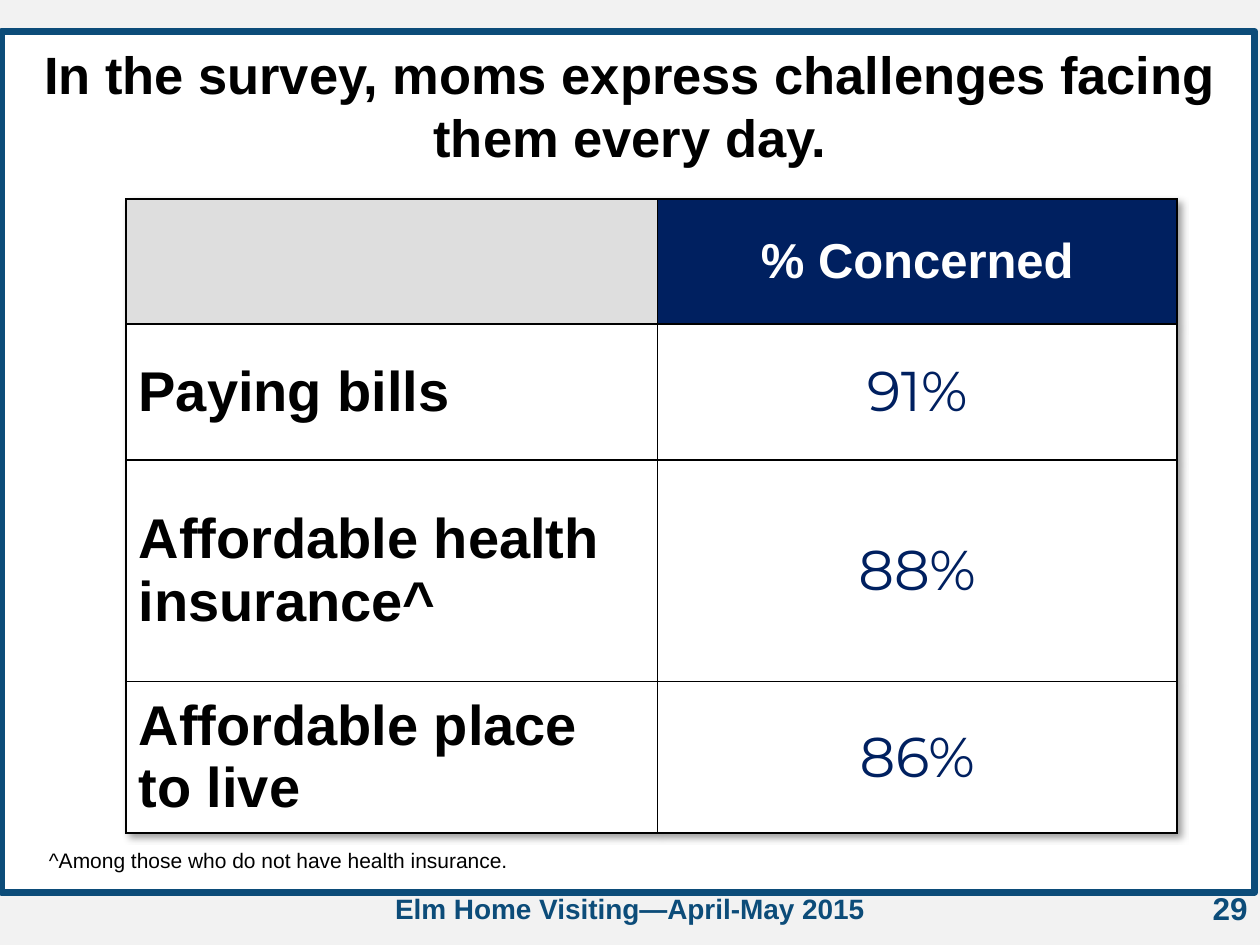
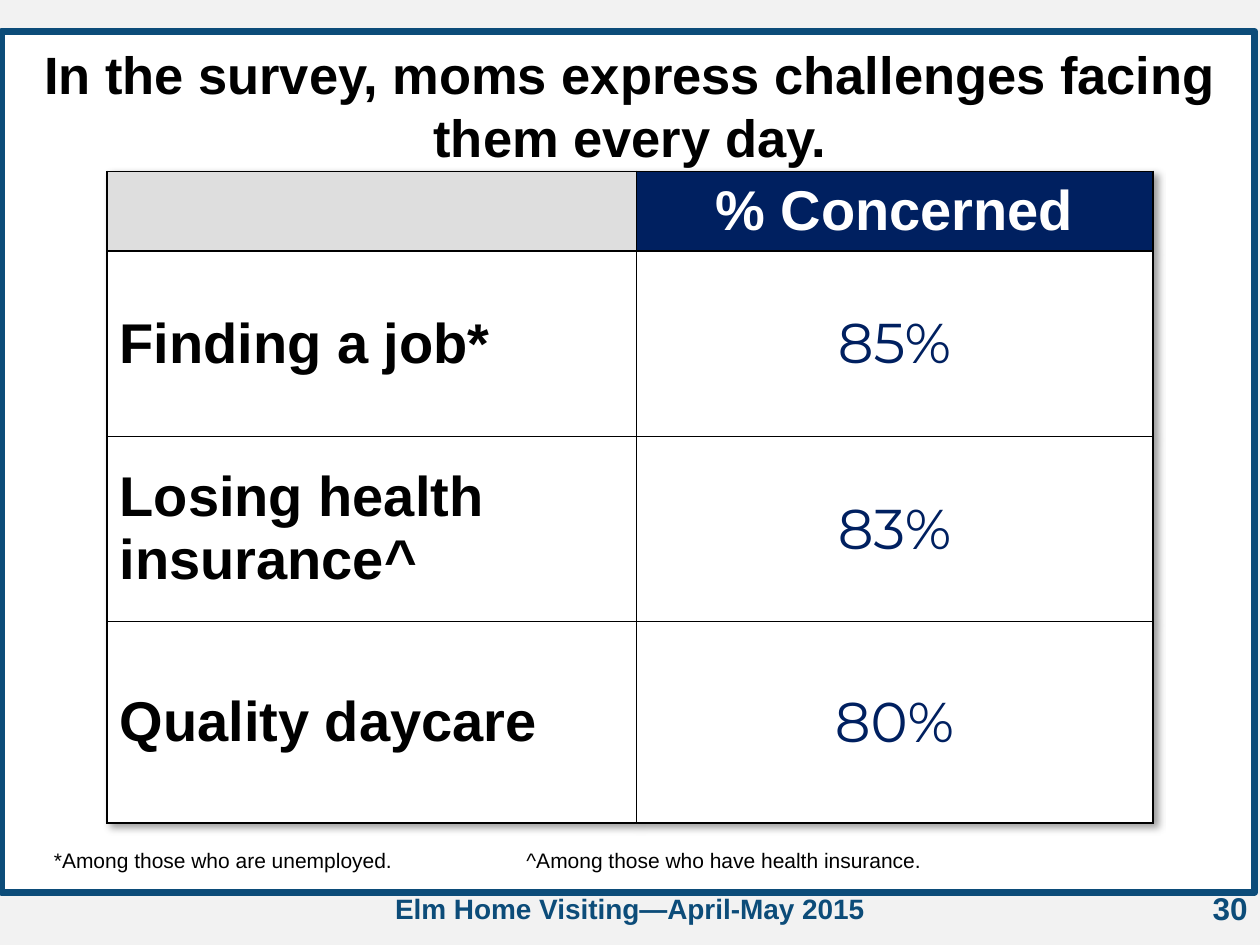
from lxml import etree
from pptx import Presentation
from pptx.dml.color import RGBColor
from pptx.enum import shapes, text
from pptx.util import Inches, Pt

GREY = RGBColor(0xF2, 0xF2, 0xF2)
HEAD = RGBColor(0xDE, 0xDE, 0xDE)
WHITE = RGBColor(0xFF, 0xFF, 0xFF)
BLACK = RGBColor(0, 0, 0)
BLUE = RGBColor(0x0C, 0x4C, 0x79)
NAVY = RGBColor(0, 0x20, 0x60)
LEFT, MID, RIGHT = text.PP_ALIGN.LEFT, text.PP_ALIGN.CENTER, text.PP_ALIGN.RIGHT

NS = 'xmlns:a="http://schemas.openxmlformats.org/drawingml/2006/main"'
EDGE = ('<a:{} ' + NS + ' w="12700"><a:solidFill><a:srgbClr val="000000"/>'
        '</a:solidFill></a:{}>')
SHADOW = ('<a:effectLst ' + NS + '><a:outerShdw blurRad="50800" dist="38100" '
          'dir="2700000" algn="tl"><a:srgbClr val="000000"><a:alpha val="40000"/>'
          '</a:srgbClr></a:outerShdw></a:effectLst>')

TITLE = "In the survey, moms express challenges facing them every day."
FOOT = "Elm Home Visiting—April-May 2015"
FIRST = 29  # number of the first page

PAGES = [
    dict(at=(1, 1.58), cols=(4.22, 4.12), rows=(0.99, 1.08, 1.76, 1.2), head=28,
         data=[("Paying bills", "91%"),
               ("Affordable health insurance^", "88%"),
               ("Affordable place to live", "86%")],
         notes=[(0.29, "^Among those who do not have health insurance.")]),
    dict(at=(0.85, 1.36), cols=(4.2, 4.1), rows=(0.63, 1.47, 1.47, 1.6), head=32,
         data=[("Finding a job*", "85%"),
               ("Losing health insurance^", "83%"),
               ("Quality daycare", "80%")],
         notes=[(0.33, "*Among those who are unemployed."),
                (4.08, "^Among those who have health insurance.")]),
]


def write(frame, words, size=32, color=BLACK, bold=True, align=LEFT, font="Arial"):
    para = frame.paragraphs[0]
    para.alignment = align
    run = para.add_run()
    run.text = words
    run.font.name, run.font.size, run.font.bold = font, Pt(size), bold
    run.font.color.rgb = color


def add_box(slide, x, y, w, h, words, **form):
    box = slide.shapes.add_textbox(Inches(x), Inches(y), Inches(w), Inches(h))
    box.text_frame.word_wrap = True
    write(box.text_frame, words, **form)


prs = Presentation()
prs.slide_width, prs.slide_height = Inches(10), Inches(7.5)

for num, page in enumerate(PAGES, FIRST):
    slide = prs.slides.add_slide(prs.slide_layouts[5])
    slide.background.fill.solid()
    slide.background.fill.fore_color.rgb = GREY

    # Title
    title = slide.shapes.title
    title.left, title.top = Inches(0), Inches(0.28)
    title.width, title.height = Inches(10), Inches(1.11)
    title.text_frame.auto_size = text.MSO_AUTO_SIZE.NONE
    title.text_frame.vertical_anchor = text.MSO_ANCHOR.MIDDLE
    write(title.text_frame, TITLE, size=30, align=MID)

    # White panel behind the title
    panel = slide.shapes.add_shape(shapes.MSO_SHAPE.ROUNDED_RECTANGLE, Inches(0.01),
                                   Inches(0.25), Inches(9.95), Inches(6.83))
    panel.adjustments[0] = 0
    panel.shadow.inherit = False
    panel.fill.solid()
    panel.fill.fore_color.rgb = WHITE
    panel.line.color.rgb, panel.line.width = BLUE, Pt(4)
    title.element.addprevious(panel.element)

    # Footer
    add_box(slide, 7.67, 7.01, 2.33, 0.4, str(num), size=18, color=BLUE, align=RIGHT)
    add_box(slide, 2.53, 7.03, 4.94, 0.37, FOOT, size=16, color=BLUE, align=MID)

    # Table
    x, y = page["at"]
    cols, rows = page["cols"], page["rows"]
    table = slide.shapes.add_table(len(rows), len(cols), Inches(x), Inches(y),
                                   Inches(sum(cols)), Inches(sum(rows))).table
    for col, wide in zip(table.columns, cols):
        col.width = Inches(wide)
    for row, high in zip(table.rows, rows):
        row.height = Inches(high)
    table._tbl.tblPr.insert(0, etree.fromstring(SHADOW))

    for cell in table.iter_cells():
        cell.vertical_anchor = text.MSO_ANCHOR.MIDDLE
        cell.fill.solid()
        cell.fill.fore_color.rgb = WHITE
        props = cell._tc.get_or_add_tcPr()
        for i, side in enumerate(("lnL", "lnR", "lnT", "lnB")):
            props.insert(i, etree.fromstring(EDGE.format(side, side)))

    table.cell(0, 0).fill.fore_color.rgb = HEAD
    table.cell(0, 1).fill.fore_color.rgb = NAVY
    write(table.cell(0, 1).text_frame, "% Concerned", size=page["head"],
          color=WHITE, align=MID)
    for r, (item, share) in enumerate(page["data"], 1):
        write(table.cell(r, 0).text_frame, item)
        write(table.cell(r, 1).text_frame, share, color=NAVY, bold=False,
              align=MID, font="Montserrat")

    # Notes
    for left, note in page["notes"]:
        add_box(slide, left, 6.68, 5.5, 0.3, note, size=12, bold=False)

prs.save("out.pptx")
